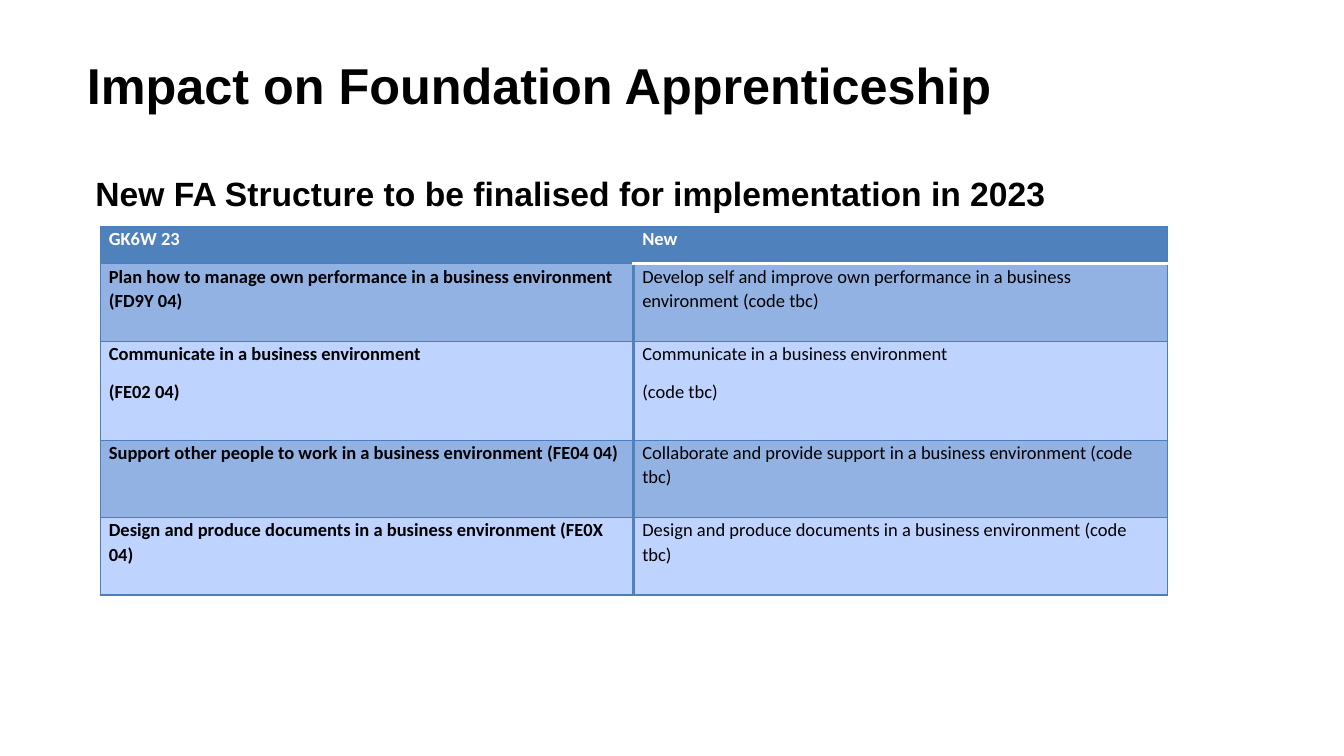
"""Build the slide comparing the current and new Foundation Apprenticeship units."""
from typing import NamedTuple

from lxml.etree import SubElement
from pptx import Presentation
from pptx.dml.color import RGBColor
from pptx.enum.text import MSO_ANCHOR
from pptx.oxml.ns import qn
from pptx.util import Inches, Pt

SLIDE_WIDTH, SLIDE_HEIGHT = Inches(11.11), Inches(6.25)
COLUMN, ROW = SLIDE_WIDTH / 100, SLIDE_HEIGHT / 100
COLORS = {
    "text": "000000",
    "white": "FFFFFF",
    "header": "4F81BD",
    "grid": "4B7EBC",
    "dark band": "93B2E4",
    "light band": "BFD3FF",
}


class Heading(NamedTuple):
    text: str
    size: float
    left: float
    top: float
    width: float
    height: float
    inset_top: float


class Unit(NamedTuple):
    current: str
    new: str
    height: float


class Edge(NamedTuple):
    color: str
    points: float


HEADINGS = [
    Heading("Impact on Foundation Apprenticeship", 30, 5.58, 5.6, 86.2, 16.3, 1.6),
    Heading("New FA Structure to be finalised for implementation in 2023",
            20, 6.21, 21.44, 88.2, 37.8, 1.44),
]
UNITS = [
    Unit("GK6W 23", "New", 4.96),
    Unit("Plan how to manage own performance in a business environment (FD9Y 04)",
         "Develop self and improve own performance in a business environment (code tbc)",
         10.24),
    Unit("Communicate in a business environment\n(FE02 04)",
         "Communicate in a business environment\n(code tbc)", 13.12),
    Unit("Support other people to work in a business environment (FE04 04)",
         "Collaborate and provide support in a business environment (code tbc)", 10.24),
    Unit("Design and produce documents in a business environment (FE0X 04)",
         "Design and produce documents in a business environment (code tbc)", 10.24),
]
TABLE_LEFT, TABLE_TOP, UNIT_WIDTH = 7.47, 29.92, 39.69
THIN, DIVIDER, HEADER_RULE = Edge("grid", 0.75), Edge("header", 2), Edge("white", 2)


def across(columns: float) -> int:
    return round(columns * COLUMN)


def down(rows: float) -> int:
    return round(rows * ROW)


def write(frame, text: str, *, font: str, size: float, color: str = "text",
          bold: bool = True, spacing: float = 1.0, after: float = 0) -> None:
    frame.word_wrap = True
    for index, line in enumerate(text.split("\n")):
        paragraph = frame.add_paragraph() if index else frame.paragraphs[0]
        paragraph.line_spacing = spacing
        paragraph.space_after = Pt(after)
        run = paragraph.add_run()
        run.text = line
        run.font.name, run.font.size, run.font.bold = font, Pt(size), bold
        run.font.color.rgb = RGBColor.from_string(COLORS[color])


def add_heading(slide, heading: Heading) -> None:
    box = slide.shapes.add_textbox(across(heading.left), down(heading.top),
                                   across(heading.width), down(heading.height))
    frame = box.text_frame
    frame.vertical_anchor = MSO_ANCHOR.TOP
    frame.margin_top = down(heading.inset_top)
    write(frame, heading.text, font="Arial", size=heading.size)


def set_edges(cell, edges: dict[str, Edge]) -> None:
    properties = cell._tc.get_or_add_tcPr()
    for side in "LRTB":
        edge = edges[side]
        line = SubElement(properties, qn(f"a:ln{side}"), w=str(Pt(edge.points)))
        fill = SubElement(line, qn("a:solidFill"))
        SubElement(fill, qn("a:srgbClr"), val=COLORS[edge.color])


def fill_cell(cell, text: str, row: int, column: int) -> None:
    is_header, is_new = row == 0, column == 1
    band = "header" if is_header else "dark band" if row % 2 else "light band"
    set_edges(cell, {
        "L": DIVIDER if is_new else THIN,
        "R": THIN if is_new else DIVIDER,
        "T": HEADER_RULE if is_new and row == 1 else THIN,
        "B": HEADER_RULE if is_new and is_header else THIN,
    })
    cell.fill.solid()
    cell.fill.fore_color.rgb = RGBColor.from_string(COLORS[band])
    cell.margin_left = cell.margin_right = Inches(0.07)
    cell.margin_top = cell.margin_bottom = 0
    write(cell.text_frame, text, font="Calibri", size=11,
          color="white" if is_header else "text",
          bold=is_header or not is_new, spacing=1.07, after=8)


def add_units(slide) -> None:
    units = slide.shapes.add_table(
        len(UNITS), 2, across(TABLE_LEFT), down(TABLE_TOP), across(2 * UNIT_WIDTH),
        down(sum(unit.height for unit in UNITS))).table
    units.first_row = units.horz_banding = False
    for column in units.columns:
        column.width = across(UNIT_WIDTH)
    for row, unit in enumerate(UNITS):
        units.rows[row].height = down(unit.height)
        for column, text in enumerate((unit.current, unit.new)):
            fill_cell(units.cell(row, column), text, row, column)


def main() -> None:
    deck = Presentation()
    deck.slide_width, deck.slide_height = SLIDE_WIDTH, SLIDE_HEIGHT
    slide = deck.slides.add_slide(deck.slide_layouts[6])
    for heading in HEADINGS:
        add_heading(slide, heading)
    add_units(slide)
    deck.save("out.pptx")


if __name__ == "__main__":
    main()
